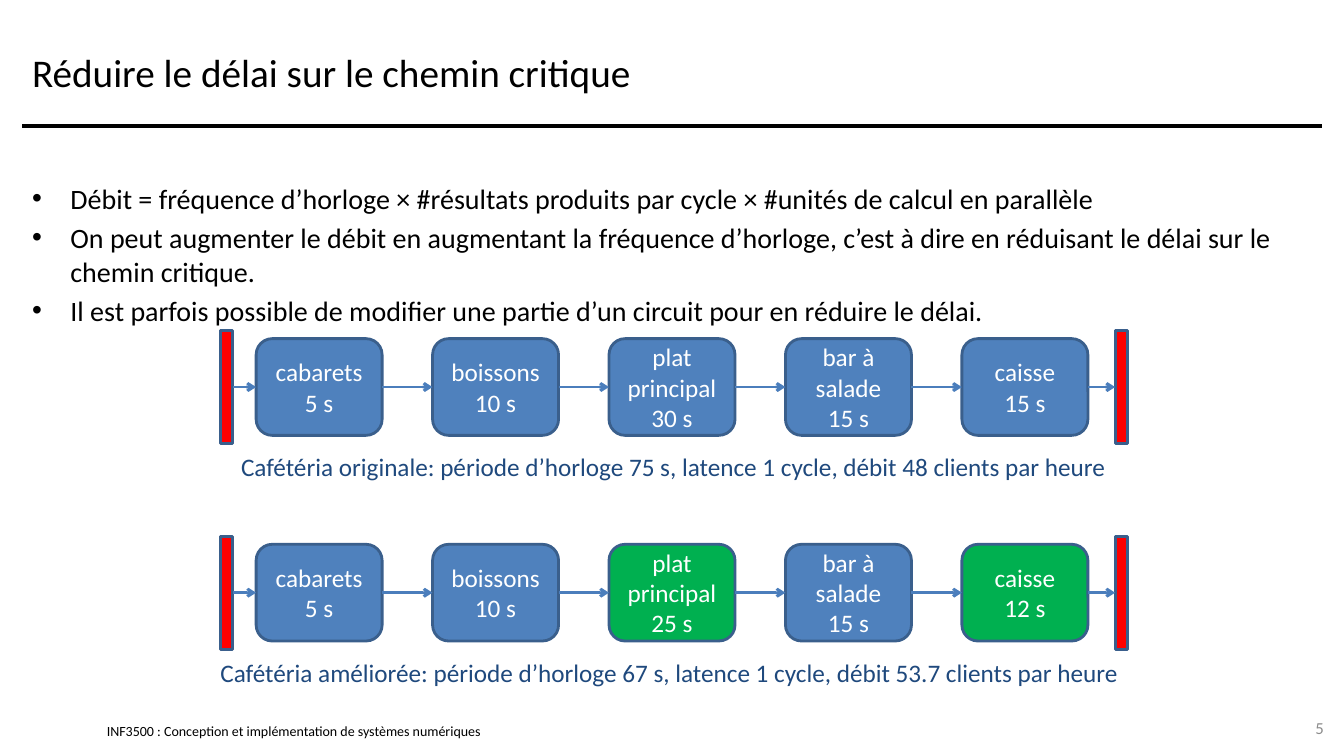
from dataclasses import dataclass

from lxml.etree import SubElement
from pptx import Presentation
from pptx.dml.color import RGBColor
from pptx.enum.shapes import MSO_CONNECTOR as Connector, MSO_SHAPE as Preset
from pptx.enum.text import MSO_ANCHOR as Anchor, PP_ALIGN as Align
from pptx.oxml.ns import qn
from pptx.util import Inches, Pt

BLACK = RGBColor(0x00, 0x00, 0x00)
WHITE = RGBColor(0xFF, 0xFF, 0xFF)
GREY = RGBColor(0x8C, 0x8C, 0x8C)
NAVY = RGBColor(0x1F, 0x49, 0x7D)
BLUE = RGBColor(0x4F, 0x81, 0xBD)
OUTLINE = RGBColor(0x3A, 0x5F, 0x8C)
ARROW = RGBColor(0x4B, 0x7E, 0xBC)
GREEN = RGBColor(0x00, 0xB0, 0x50)
RED = RGBColor(0xFF, 0x00, 0x00)

# Pipeline grid, in inches
GRID_LEFT, GRID_TOP = 2.54, 3.36
COLUMN, ROW = 1.75, 2.04
STAGE_WIDTH, STAGE_HEIGHT = 1.25, 0.96
REGISTER_WIDTH, REGISTER_HEIGHT = 0.12, 1.12
REGISTER_LEFTS = 2.19, 11.06
CAPTION_DROP = 1.12
MARGIN, CONTENT_WIDTH = 0.22, 12.89
BULLET_INDENT = 0.38


@dataclass(frozen=True)
class Box:
    left: float
    top: float
    width: float
    height: float

    def emu(self) -> tuple:
        return tuple(Inches(v) for v in (self.left, self.top, self.width, self.height))


@dataclass(frozen=True)
class Stage:
    name: str
    delay: str
    color: RGBColor = BLUE


@dataclass(frozen=True)
class Pipeline:
    stages: tuple
    caption: str
    caption_left: float


PIPELINES = (
    Pipeline(
        (Stage("cabarets", "5 s"), Stage("boissons", "10 s"), Stage("plat principal", "30 s"),
         Stage("bar à salade", "15 s"), Stage("caisse", "15 s")),
        "Cafétéria originale: période d’horloge 75 s, latence 1 cycle, débit 48 clients par heure",
        1.87),
    Pipeline(
        (Stage("cabarets", "5 s"), Stage("boissons", "10 s"), Stage("plat principal", "25 s", GREEN),
         Stage("bar à salade", "15 s"), Stage("caisse", "12 s", GREEN)),
        "Cafétéria améliorée: période d’horloge 67 s, latence 1 cycle, débit 53.7 clients par heure",
        1.83),
)
BULLETS = (
    "Débit = fréquence d’horloge × #résultats produits par cycle × #unités de calcul en parallèle",
    "On peut augmenter le débit en augmentant la fréquence d’horloge, c’est à dire en réduisant "
    "le délai sur le chemin critique.",
    "Il est parfois possible de modifier une partie d’un circuit pour en réduire le délai.",
)


def add_bullet(paragraph) -> None:
    properties = paragraph._p.get_or_add_pPr()
    properties.set("marL", str(Inches(BULLET_INDENT)))
    properties.set("indent", str(-Inches(BULLET_INDENT)))
    SubElement(properties, qn("a:buFont"), typeface="Arial")
    SubElement(properties, qn("a:buChar"), char="•")


def write(shape, lines: tuple, size: int, color: RGBColor, align=Align.LEFT,
          anchor=Anchor.MIDDLE, bulleted: bool = False) -> None:
    frame = shape.text_frame
    frame.word_wrap = True
    frame.vertical_anchor = anchor
    for index, line in enumerate(lines):
        paragraph = frame.add_paragraph() if index else frame.paragraphs[0]
        paragraph.alignment = align
        if bulleted:
            if index:
                paragraph.space_before = Pt(size * 0.2)
            add_bullet(paragraph)
        run = paragraph.add_run()
        run.text = line
        run.font.name = "Calibri"
        run.font.size = Pt(size)
        run.font.color.rgb = color


def add_text(slide, box: Box, lines: tuple, size: int, color: RGBColor,
             inset: bool = True, **options) -> None:
    shape = slide.shapes.add_textbox(*box.emu())
    if not inset:
        frame = shape.text_frame
        frame.margin_left = frame.margin_right = frame.margin_top = frame.margin_bottom = 0
    write(shape, lines, size, color, **options)


def add_block(slide, preset, box: Box, color: RGBColor):
    shape = slide.shapes.add_shape(preset, *box.emu())
    shape.shadow.inherit = False
    shape.fill.solid()
    shape.fill.fore_color.rgb = color
    shape.line.color.rgb = OUTLINE
    shape.line.width = Pt(2)
    return shape


def add_line(slide, start: tuple, end: tuple, color: RGBColor, width: float):
    connector = slide.shapes.add_connector(
        Connector.STRAIGHT, *(Inches(v) for v in start + end))
    connector.line.color.rgb = color
    connector.line.width = Pt(width)
    SubElement(connector._element.spPr, qn("a:effectLst"))
    return connector


def join(slide, source, target) -> None:
    connector = add_line(slide, (0, 0), (0, 0), ARROW, 2)
    connector.begin_connect(source, 3)
    connector.end_connect(target, 1)
    SubElement(connector.line._get_or_add_ln(), qn("a:tailEnd"), type="arrow")


def draw_pipeline(slide, pipeline: Pipeline, row: int) -> None:
    top = GRID_TOP + row * ROW
    register_top = top + (STAGE_HEIGHT - REGISTER_HEIGHT) / 2
    entry, leaving = (
        add_block(slide, Preset.RECTANGLE,
                  Box(left, register_top, REGISTER_WIDTH, REGISTER_HEIGHT), RED)
        for left in REGISTER_LEFTS)

    blocks = []
    for column, stage in enumerate(pipeline.stages):
        box = Box(GRID_LEFT + column * COLUMN, top, STAGE_WIDTH, STAGE_HEIGHT)
        block = add_block(slide, Preset.ROUNDED_RECTANGLE, box, stage.color)
        write(block, (stage.name, stage.delay), 18, WHITE, Align.CENTER)
        blocks.append(block)

    chain = [entry, *blocks, leaving]
    for source, target in zip(chain, chain[1:]):
        join(slide, source, target)
    add_text(slide, Box(pipeline.caption_left, top + CAPTION_DROP, 9.62, 0.3),
             (pipeline.caption,), 18, NAVY, inset=False, align=Align.CENTER)


def main() -> None:
    presentation = Presentation()
    presentation.slide_width, presentation.slide_height = Inches(13.33), Inches(7.5)
    slide = presentation.slides.add_slide(presentation.slide_layouts[6])

    # Title and rule
    add_text(slide, Box(MARGIN, 0.17, CONTENT_WIDTH, 1.08),
             ("Réduire le délai sur le chemin critique",), 28, BLACK)
    add_line(slide, (MARGIN, 1.25), (MARGIN + CONTENT_WIDTH, 1.25), BLACK, 3)

    # Bullets
    add_text(slide, Box(MARGIN, 1.75, CONTENT_WIDTH, 5.25), BULLETS, 20, BLACK,
             anchor=Anchor.TOP, bulleted=True)

    # Pipelines
    for row, pipeline in enumerate(PIPELINES):
        draw_pipeline(slide, pipeline, row)

    # Footer and slide number
    add_text(slide, Box(1.06, 7.17, 5.11, 0.17),
             ("INF3500 : Conception et implémentation de systèmes numériques",),
             10, BLACK, inset=False)
    add_text(slide, Box(12.56, 7.02, 0.67, 0.4), ("5",), 12, GREY, align=Align.RIGHT)

    presentation.save("out.pptx")


if __name__ == "__main__":
    main()
